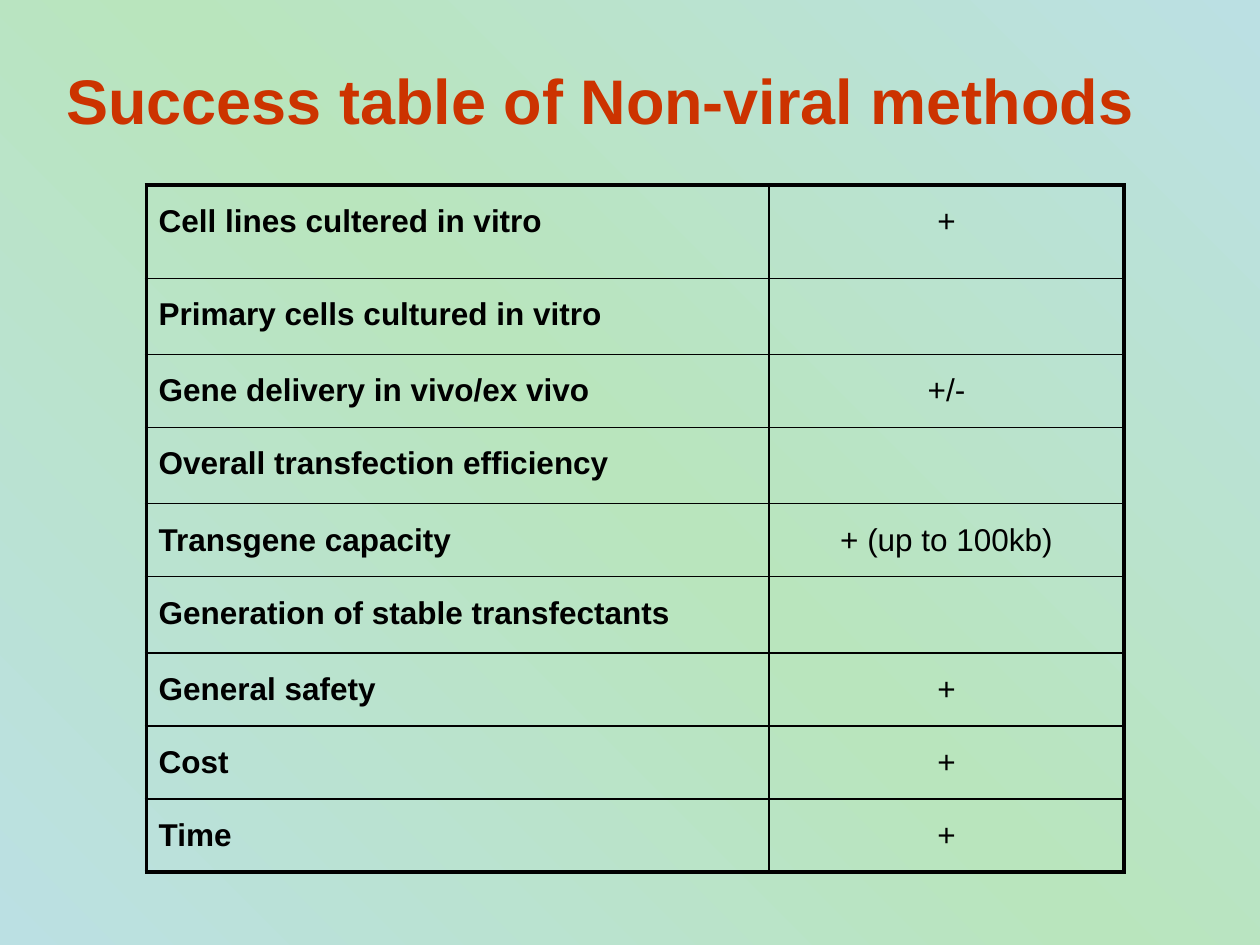
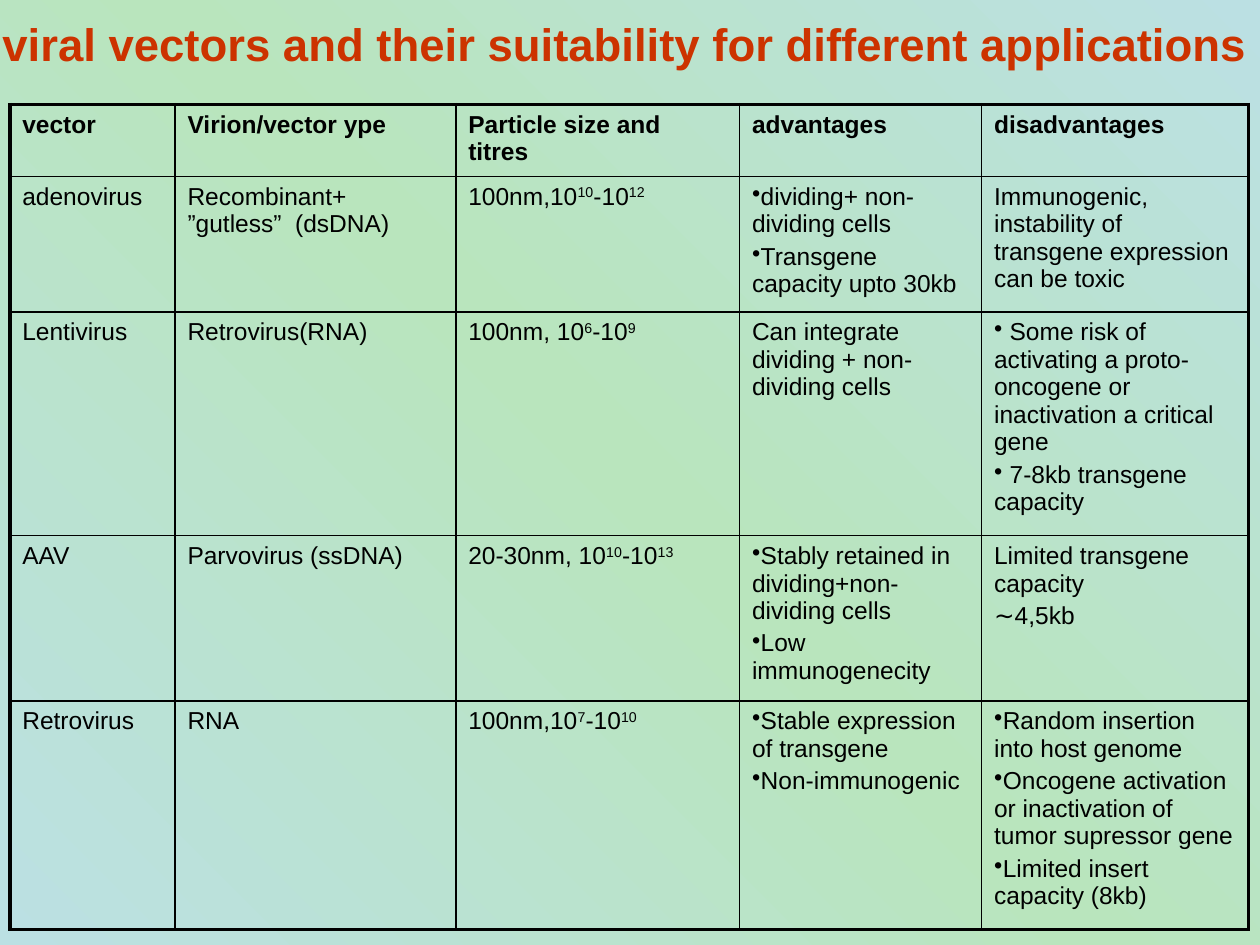
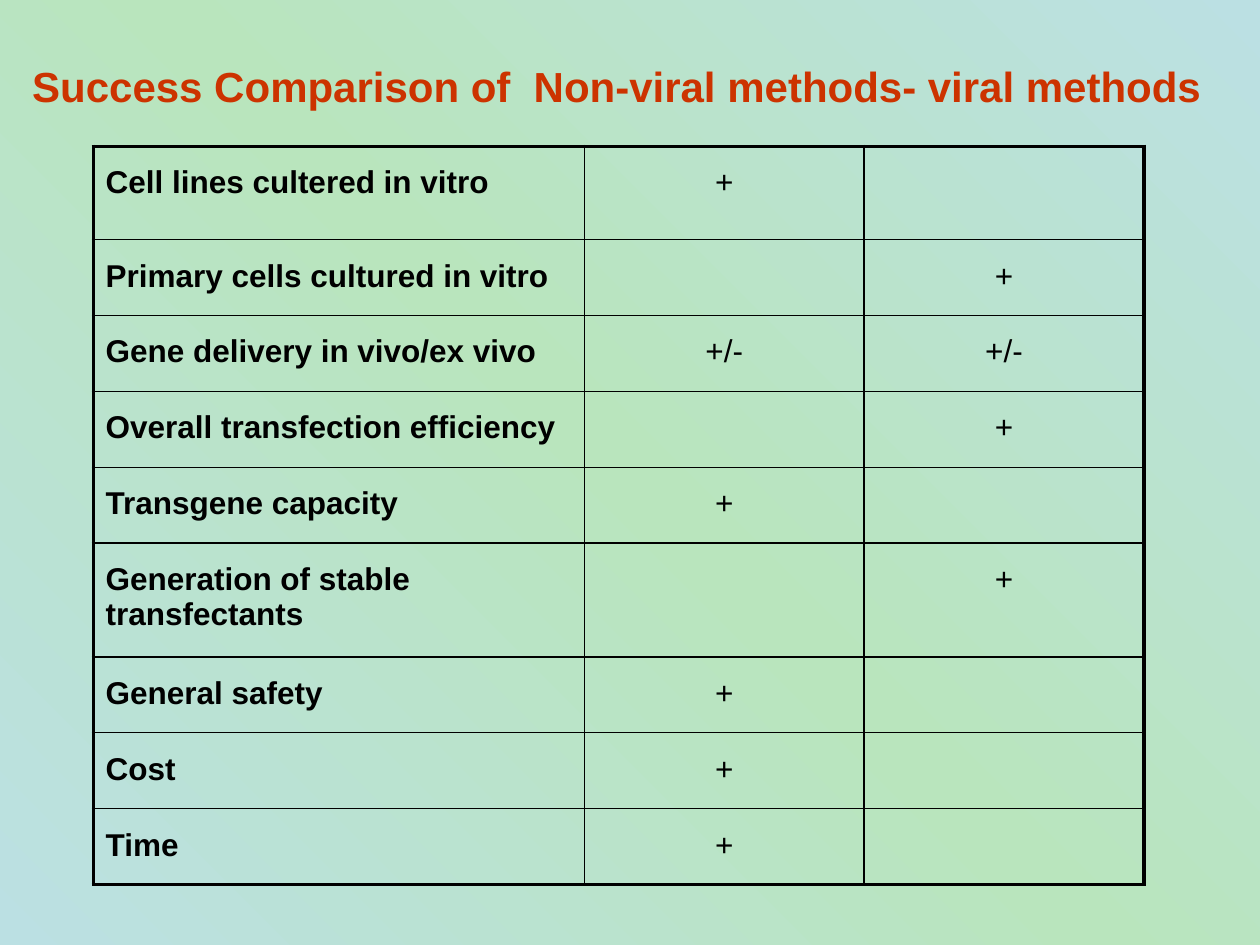
"""Build three slides of tables on non-viral and viral gene delivery methods."""
import copy
from dataclasses import dataclass

import pptx
import pptx.dml.color
import pptx.enum.text
import pptx.oxml
import pptx.oxml.ns
import pptx.slide
import pptx.table
import pptx.util
from lxml import etree
from pptx.util import Cm

COLORS = {"title": "CC3300", "ink": "000000", "edge": "BBE0E3", "middle": "B9E5BD"}
FONT = "Arial"
OUTER_LINE, INNER_LINE = 2.25, 1

ASPECTS = (
    "Cell lines cultered in vitro",
    "Primary cells cultured in vitro",
    "Gene delivery in vivo/ex vivo",
    "Overall transfection efficiency",
    "Transgene capacity",
    "Generation of stable transfectants",
    "General safety",
    "Cost",
    "Time",
)
NON_VIRAL_NOTED = ("+", "", "+/-", "", "+ (up to 100kb)", "", "+", "+", "+")
NON_VIRAL = ("+", "", "+/-", "", "+", "", "+", "+", "+")
VIRAL = ("", "+", "+/-", "+", "", "+", "", "", "")

VECTORS = (
    ("vector", "Virion/vector ype", "Particle size and titres", "advantages", "disadvantages"),
    ("adenovirus", "Recombinant+ ”gutless”  (dsDNA)", "100nm,10^10^-10^12^",
     "•dividing+ non-dividing cells\n•Transgene capacity upto 30kb",
     "Immunogenic, instability of transgene expression can be toxic"),
    ("Lentivirus", "Retrovirus(RNA)", "100nm, 10^6^-10^9^",
     "Can integrate dividing + non-dividing cells",
     "• Some risk of activating a proto-oncogene or inactivation a critical gene\n"
     "• 7-8kb transgene capacity"),
    ("AAV", "Parvovirus (ssDNA)", "20-30nm, 10^10^-10^13^",
     "•Stably retained in dividing+non-dividing cells\n•Low immunogenecity",
     "Limited transgene capacity\n∼4,5kb"),
    ("Retrovirus", "RNA", "100nm,10^7^-10^10^",
     "•Stable expression of transgene\n•Non-immunogenic",
     "•Random insertion into host genome\n"
     "•Oncogene activation or inactivation of tumor supressor gene\n"
     "•Limited insert capacity (8kb)"),
)


@dataclass(frozen=True)
class Title:
    text: str
    left: float
    top: float
    width: float
    height: float
    size: int
    wrap: bool = False


@dataclass(frozen=True)
class Grid:
    rows: tuple
    left: float
    top: float
    widths: tuple
    heights: tuple
    size: int = 18
    margin: float = 0.38
    success: bool = True


SLIDES = (
    (Title("Success table of Non-viral methods", 1.09, 1.12, 24.31, 1.8, 36, True),
     Grid(tuple(zip(ASPECTS, NON_VIRAL_NOTED)), 2.95, 3.73,
          (12.55, 7.16), (1.88,) + (1.47,) * 8)),
    (Title("viral vectors and their suitability for different applications",
           -0.2, 0.2, 25.86, 1.37, 26),
     Grid(VECTORS, 0.2, 2.11, (3.33, 5.66, 5.72, 4.88, 5.38),
          (1.44, 2.72, 4.5, 3.33, 4.6), 14, 0.13, False)),
    (Title("Success Comparison of  Non-viral methods- viral methods",
           0.4, 1.09, 24.31, 1.3, 24),
     Grid(tuple(zip(ASPECTS, NON_VIRAL, VIRAL)), 1.88, 2.95, (9.9, 5.64, 5.64),
          (1.88,) + (1.53,) * 4 + (2.29,) + (1.53,) * 3)),
)


def add_element(parent, tag: str, **attributes: str):
    element = etree.SubElement(parent, pptx.oxml.ns.qn(tag))
    for name, value in attributes.items():
        element.set(name, value)
    return element


def rgb(name: str) -> pptx.dml.color.RGBColor:
    return pptx.dml.color.RGBColor.from_string(COLORS[name])


def format_run(run, size: int, color: str, bold: bool) -> None:
    run.font.name = FONT
    run.font.size = pptx.util.Pt(size)
    run.font.bold = bold
    run.font.color.rgb = rgb(color)


def set_background(master: pptx.slide.SlideMaster) -> None:
    fill = master.background.fill
    fill.gradient()
    fill.gradient_angle = 45
    for stop in fill.gradient_stops:
        stop.color.rgb = rgb("edge")
    stops = next(master.element.iter(pptx.oxml.ns.qn("a:gsLst")))
    stops.insert(1, copy.deepcopy(stops[0]))
    middle = fill.gradient_stops[1]
    middle.position = 0.5
    middle.color.rgb = rgb("middle")


def add_title(slide: pptx.slide.Slide, title: Title) -> None:
    box = slide.shapes.add_textbox(
        Cm(title.left), Cm(title.top), Cm(title.width), Cm(title.height))
    frame = box.text_frame
    frame.word_wrap = title.wrap
    frame.auto_size = pptx.enum.text.MSO_AUTO_SIZE.SHAPE_TO_FIT_TEXT
    frame.text = title.text
    format_run(frame.paragraphs[0].runs[0], title.size, "title", True)


def write_paragraph(paragraph, text: str, size: int, bold: bool, centered: bool) -> None:
    if centered:
        paragraph.alignment = pptx.enum.text.PP_ALIGN.CENTER
    properties = paragraph._p.get_or_add_pPr()
    add_element(add_element(properties, "a:spcBef"), "a:spcPct", val="20000")
    if text.startswith("•"):
        add_element(properties, "a:buChar", char="•")
    for index, part in enumerate(text.removeprefix("•").split("^")):
        if part:
            run = paragraph.add_run()
            run.text = part
            format_run(run, size, "ink", bold)
            if index % 2:
                run._r.get_or_add_rPr().set("baseline", "30000")


def draw_borders(cell, outer_sides: dict[str, bool]) -> None:
    properties = cell._tc.get_or_add_tcPr()
    for side, outer in outer_sides.items():
        width = pptx.util.Pt(OUTER_LINE if outer else INNER_LINE)
        line = add_element(properties, f"a:ln{side}", w=str(int(width)))
        add_element(add_element(line, "a:solidFill"), "a:srgbClr", val=COLORS["ink"])
    cell.fill.background()


def fill_cell(cell, grid: Grid, row: int, column: int) -> None:
    cell.margin_left = cell.margin_right = Cm(0.25)
    cell.margin_top = cell.margin_bottom = Cm(grid.margin)
    bold = column == 0 if grid.success else row == 0
    centered = grid.success and column > 0
    frame = cell.text_frame
    for index, text in enumerate(grid.rows[row][column].split("\n")):
        paragraph = frame.add_paragraph() if index else frame.paragraphs[0]
        write_paragraph(paragraph, text, grid.size, bold, centered)
    draw_borders(cell, {
        "L": column == 0,
        "R": column == len(grid.widths) - 1,
        "T": row == 0,
        "B": row == len(grid.heights) - 1,
    })


def add_grid(slide: pptx.slide.Slide, grid: Grid) -> None:
    table: pptx.table.Table = slide.shapes.add_table(
        len(grid.heights), len(grid.widths), Cm(grid.left), Cm(grid.top),
        Cm(sum(grid.widths)), Cm(sum(grid.heights))).table
    table.first_row = table.horz_banding = False
    for column, width in zip(table.columns, grid.widths):
        column.width = Cm(width)
    for row, height in zip(table.rows, grid.heights):
        row.height = Cm(height)
    for row in range(len(grid.heights)):
        for column in range(len(grid.widths)):
            fill_cell(table.cell(row, column), grid, row, column)


def main() -> None:
    presentation = pptx.Presentation()
    presentation.slide_width, presentation.slide_height = Cm(25.4), Cm(19.05)
    set_background(presentation.slide_master)
    for title, grid in SLIDES:
        slide = presentation.slides.add_slide(presentation.slide_layouts[6])
        add_grid(slide, grid)
        add_title(slide, title)
    presentation.save("out.pptx")


if __name__ == "__main__":
    main()
